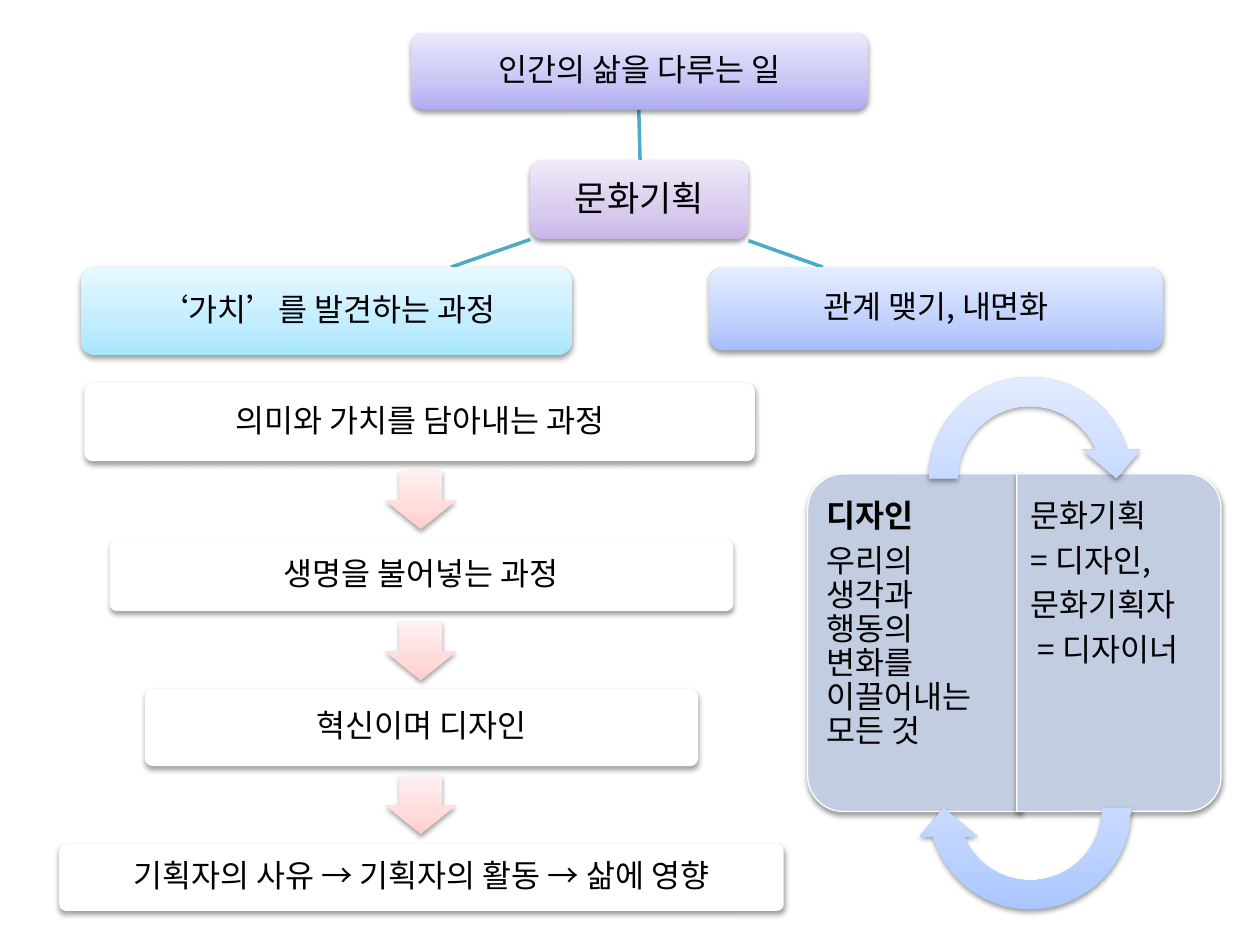
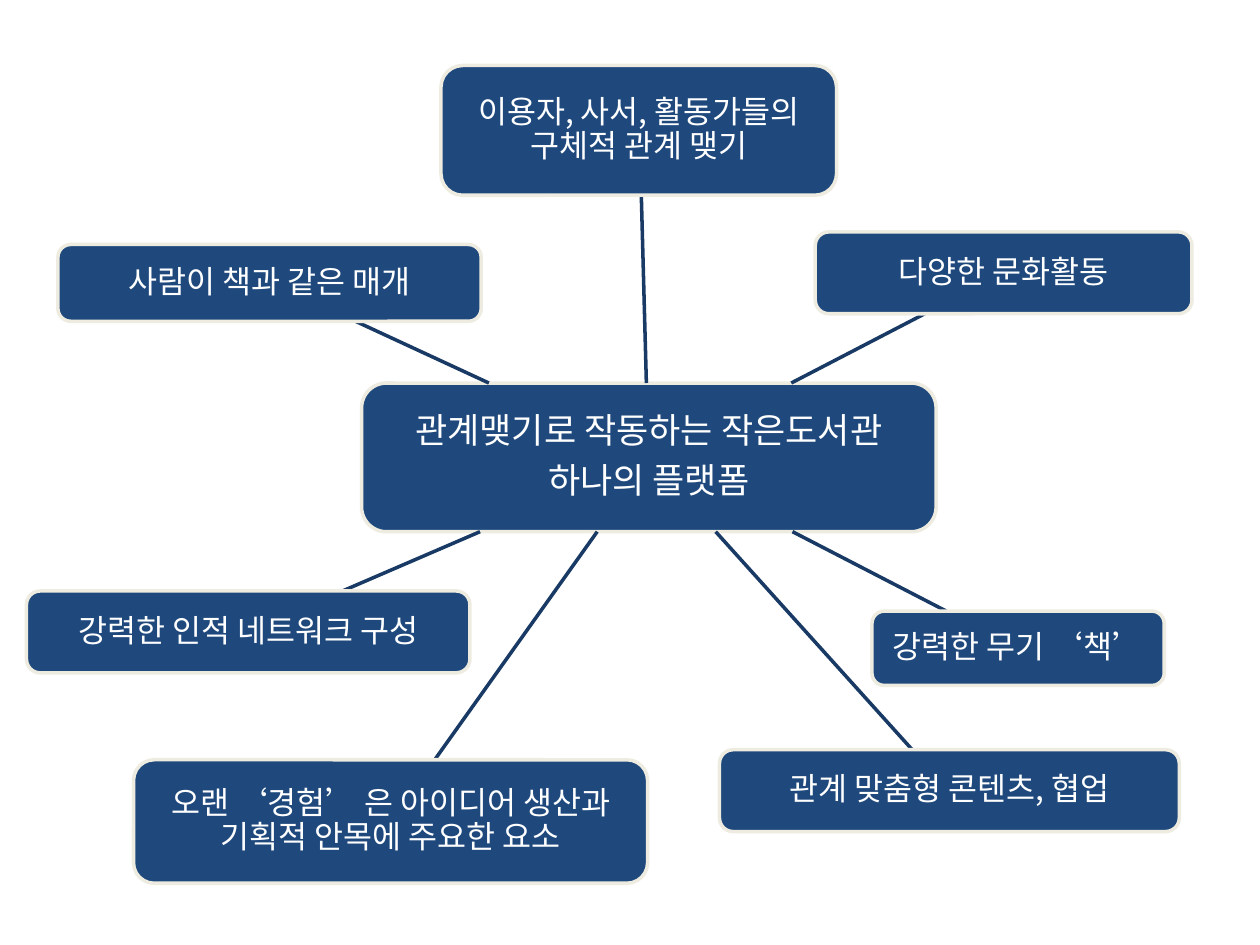
from pptx import Presentation
from pptx.dml.color import RGBColor
from pptx.enum.shapes import MSO_CONNECTOR, MSO_SHAPE
from pptx.enum.text import MSO_ANCHOR, PP_ALIGN
from pptx.oxml import parse_xml
from pptx.oxml.ns import nsdecls, qn
from pptx.util import Emu, Pt

PX = 9144  # 100 px to the inch
FONT = "Noto Sans CJK KR"
ROUND = MSO_SHAPE.ROUNDED_RECTANGLE
HALF_ROUND = MSO_SHAPE.ROUND_2_SAME_RECTANGLE
DOWN_ARROW = MSO_SHAPE.DOWN_ARROW
CIRCULAR_ARROW = MSO_SHAPE.CIRCULAR_ARROW
STRAIGHT = MSO_CONNECTOR.STRAIGHT
CENTER, LEFT = PP_ALIGN.CENTER, PP_ALIGN.LEFT
MIDDLE, TOP = MSO_ANCHOR.MIDDLE, MSO_ANCHOR.TOP

COLORS = {
    "black": "000000", "white": "FFFFFF", "teal": "4BACC6",
    "navy": "1F497D", "navy_line": "193A64", "cream": "EEECE1",
    "panel": "C2CDE1",
}
# Stops from the bottom edge to the top edge
GRADIENTS = {
    "purple": ("C9B5E8", "D8CBEE", "F0EAF9"),
    "violet": ("AFADF3", "C7C6F5", "E9E8FC"),
    "blue": ("A5BEFD", "C0D1FD", "E6EDFF"),
    "sky": ("A7E6FF", "C1EDFF", "E7F8FF"),
    "pink": ("FFCDCC", "FFDBDA", "FFF1F1"),
    "cycle": ("A4C4FF", "BFD4FF", "E6EEFF"),
}
STOPS = (0, 35000, 100000)


def px(*values):
    return [Emu(v * PX) for v in values]


def rgb(name):
    return RGBColor.from_string(COLORS[name])


def fill_gradient(sp, name):
    sp.fill.gradient()
    sp.fill.gradient_angle = 90
    grad = sp._element.spPr.find(qn("a:gradFill"))
    grad.set("rotWithShape", "0")
    stops = grad.find(qn("a:gsLst"))
    for old in list(stops):
        stops.remove(old)
    for pos, color in zip(STOPS, GRADIENTS[name]):
        stops.append(parse_xml(
            f'<a:gs {nsdecls("a")} pos="{pos}"><a:srgbClr val="{color}"/></a:gs>'))


def add_shadow(sp):
    sp._element.spPr.find(qn("a:effectLst")).append(parse_xml(
        f'<a:outerShdw {nsdecls("a")} blurRad="39370" dist="20320" dir="5400000" '
        'rotWithShape="0"><a:srgbClr val="000000"><a:alpha val="38000"/>'
        '</a:srgbClr></a:outerShdw>'))


def add_shape(s, kind, at, fill, line=None, width=2, shadow=True, rotation=0, adj=()):
    sp = s.shapes.add_shape(kind, *px(*at))
    sp.rotation = rotation
    for i, value in enumerate(adj):
        sp.adjustments[i] = value
    if fill in GRADIENTS:
        fill_gradient(sp, fill)
    else:
        sp.fill.solid()
        sp.fill.fore_color.rgb = rgb(fill)
    if line:
        sp.line.color.rgb = rgb(line)
        sp.line.width = Pt(width)
    else:
        sp.line.fill.background()
    sp.shadow.inherit = False
    if shadow:
        add_shadow(sp)
    return sp


def write(sp, text, size=18, color="black", align=CENTER, anchor=MIDDLE,
          margins=(5, 5, 5, 5), bold_first=False):
    """Each line of text is a paragraph; a vertical tab breaks a line within one."""
    tf = sp.text_frame
    tf.word_wrap = True
    tf.vertical_anchor = anchor
    tf.margin_left, tf.margin_top, tf.margin_right, tf.margin_bottom = px(*margins)
    tf.text = text
    for i, p in enumerate(tf.paragraphs):
        p.alignment = align
        p.line_spacing = 0.9
        p.space_after = Pt(round(size * 0.35))
        for r in p.runs:
            r.font.size = Pt(size)
            r.font.name = FONT
            r.font.bold = bold_first and i == 0
            r.font.color.rgb = rgb(color)
            r._r.get_or_add_rPr().find(qn("a:latin")).addnext(
                parse_xml(f'<a:ea {nsdecls("a")} typeface="{FONT}"/>'))


def add_box(s, at, text, fill, size=18, color="black", margins=(5, 5, 5, 5), **shape):
    write(add_shape(s, ROUND, at, fill, **shape), text, size, color, margins=margins)


def add_line(s, ends, color):
    cxn = s.shapes.add_connector(STRAIGHT, *px(*ends))
    cxn.line.color.rgb = rgb(color)
    cxn.line.width = Pt(2)
    cxn._element.spPr.append(parse_xml(f'<a:effectLst {nsdecls("a")}/>'))


def add_panel(s, at, rotation, text_at, text, margins, bold_first=False):
    add_shape(s, HALF_ROUND, at, "panel", line="white", width=0.75,
              rotation=rotation, adj=(0.167, 0))
    write(s.shapes.add_textbox(*px(*text_at)), text, align=LEFT, anchor=TOP,
          margins=margins, bold_first=bold_first)


def build_planning(s):
    add_box(s, (421, 127, 173, 63), "문화기획", "purple", size=20)
    branches = [
        ((508, 127, 507, 87), (326, 26, 363, 61), "인간의 삶을 다루는 일", "violet"),
        ((594, 191, 653, 212), (563, 212, 360, 66), "관계 맺기, 내면화", "blue"),
        ((421, 190, 358, 212), (64, 212, 390, 70), "‘가치’를 발견하는 과정", "sky"),
    ]
    for ends, at, text, fill in branches:
        add_line(s, ends, "teal")
        add_box(s, at, text, fill)

    steps = [
        ((67, 304, 532, 62), "의미와 가치를 담아내는 과정"),
        ((87, 428, 495, 57), "생명을 불어넣는 과정"),
        ((115, 547, 439, 61), "혁신이며 디자인"),
        ((47, 670, 575, 53), "기획자의 사유 → 기획자의 활동 → 삶에 영향"),
    ]
    for at, text in steps:
        add_box(s, at, text, "white", margins=(7, 7, 7, 7), adj=(0.1,))
    for top in (374, 494, 616):
        add_shape(s, DOWN_ARROW, (306, top, 56, 46), "pink", adj=(0.6, 0.5))

    add_panel(s, (592, 425, 268, 170), 270, (649, 385, 162, 251),
              "디자인\n우리의 생각과 행동의 변화를 이끌어내는 모든 것",
              (7, 12, 14, 12), bold_first=True)
    add_panel(s, (754, 429, 268, 162), 90, (807, 385, 154, 252),
              "문화기획\n= 디자인,\n문화기획자\n = 디자이너", (11, 12, 7, 12))
    for top, rotation in ((288, 0), (550, 180)):
        add_shape(s, CIRCULAR_ARROW, (726, top, 183, 183), "cycle", rotation=rotation,
                  adj=(0.125, 11.423, 204.577, 108, 0.125))


def build_platform(s):
    style = dict(fill="navy", color="white", line="cream", shadow=False)
    add_box(s, (287, 304, 456, 118), "관계맺기로 작동하는 작은도서관\n하나의 플랫폼",
            size=20, **style)
    branches = [
        ((513, 304, 509, 155), (350, 52, 314, 103),
         "이용자, 사서, 활동가들의 구체적 관계 맺기"),
        ((628, 304, 734, 249), (647, 184, 299, 65), "다양한 문화활동"),
        ((381, 422, 272, 469), (21, 469, 352, 65), "강력한 인적 네트워크 구성"),
        ((568, 422, 724, 595), (571, 595, 365, 65), "관계 맞춤형 콘텐츠, 협업"),
        ((629, 422, 751, 485), (692, 485, 232, 59), "강력한 무기 ‘책’"),
        ((388, 304, 280, 254), (46, 194, 336, 61), "사람이 책과 같은 매개"),
        ((474, 422, 345, 603), (106, 603, 408, 98),
         "오랜 ‘경험’ 은 아이디어 생산과\v기획적 안목에 주요한 요소"),
    ]
    for ends, at, text in branches:
        add_line(s, ends, "navy_line")
        add_box(s, at, text, **style)


def main():
    prs = Presentation()
    prs.slide_width, prs.slide_height = px(1000, 750)
    blank = prs.slide_layouts[6]
    for build in (build_planning, build_platform):
        build(prs.slides.add_slide(blank))
    prs.save("out.pptx")


if __name__ == "__main__":
    main()
